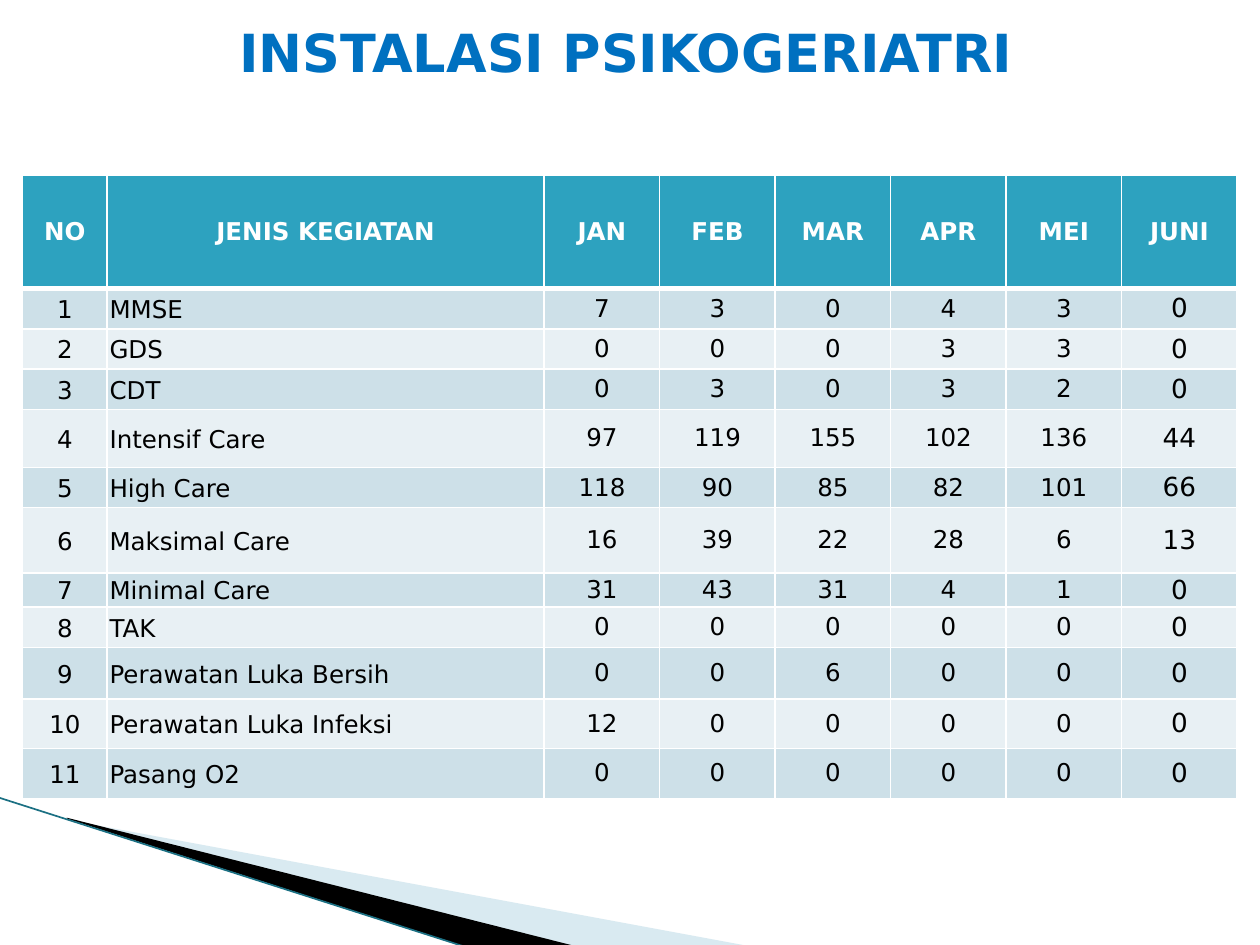
import lxml.etree
import pptx
import pptx.dml.color
import pptx.enum.shapes
import pptx.enum.text
import pptx.oxml.ns
import pptx.util

SLIDE_WIDTH = pptx.util.Inches(10)
SLIDE_HEIGHT = pptx.util.Inches(7.5)
FONT = "DejaVu Sans"
COLOURS = {
    "title": "0070C0",
    "header": "2DA2BF",
    "odd": "CDE0E8",
    "even": "E8F0F4",
    "text": "000000",
    "white": "FFFFFF",
    "pale wedge": "A0CBDC",
    "dark wedge": "000000",
    "edge": "1B7083",
}
HEADINGS = ["NO", "JENIS KEGIATAN", "JAN", "FEB", "MAR", "APR", "MEI", "JUNI"]
ACTIVITIES = [
    ("MMSE", 7, 3, 0, 4, 3, 0),
    ("GDS", 0, 0, 0, 3, 3, 0),
    ("CDT", 0, 3, 0, 3, 2, 0),
    ("Intensif Care", 97, 119, 155, 102, 136, 44),
    ("High Care", 118, 90, 85, 82, 101, 66),
    ("Maksimal Care", 16, 39, 22, 28, 6, 13),
    ("Minimal Care", 31, 43, 31, 4, 1, 0),
    ("TAK", 0, 0, 0, 0, 0, 0),
    ("Perawatan Luka Bersih", 0, 0, 6, 0, 0, 0),
    ("Perawatan Luka Infeksi", 12, 0, 0, 0, 0, 0),
    ("Pasang O2", 0, 0, 0, 0, 0, 0),
]
TABLE_WIDTH = 96.4
NUMBER_WIDTH = 6.7
ACTIVITY_WIDTH = 34.7
MONTH_WIDTH = (TABLE_WIDTH - NUMBER_WIDTH - ACTIVITY_WIDTH) / 6
COLUMN_WIDTHS = [NUMBER_WIDTH, ACTIVITY_WIDTH] + [MONTH_WIDTH] * 6
ROW_HEIGHTS = [12, 4.27, 4.27, 4.27, 6.13, 4.27, 6.93, 3.6, 4.27, 5.47, 5.2, 5.33]


def across(percent):
    """Return a percentage of the slide width."""
    return round(SLIDE_WIDTH * percent / 100)


def down(percent):
    """Return a percentage of the slide height."""
    return round(SLIDE_HEIGHT * percent / 100)


def colour(name):
    """Return the named colour."""
    return pptx.dml.color.RGBColor.from_string(COLOURS[name])


def write(frame, text, size=14, ink="text", bold=False, align="CENTER"):
    """Put one formatted paragraph in a text frame."""
    paragraph = frame.paragraphs[0]
    paragraph.alignment = getattr(pptx.enum.text.PP_ALIGN, align)
    run = paragraph.add_run()
    run.text = text
    run.font.name = FONT
    run.font.size = pptx.util.Pt(size)
    run.font.bold = bold
    run.font.color.rgb = colour(ink)


def add_title(slide, text):
    """Add the slide heading."""
    heading = slide.shapes.add_textbox(across(4.2), 0, across(91), down(10.93))
    heading.text_frame.word_wrap = True
    heading.text_frame.vertical_anchor = pptx.enum.text.MSO_ANCHOR.MIDDLE
    write(heading.text_frame, text, size=30, ink="title", bold=True)


def add_wedge(slide, corners, fill, opacity=100):
    """Add a filled outline through corners given in slide percentages."""
    points = [(across(x), down(y)) for x, y in corners]
    builder = slide.shapes.build_freeform(*points[0])
    builder.add_line_segments(points[1:], close=True)
    wedge = builder.convert_to_shape()
    wedge.shadow.inherit = False
    wedge.fill.solid()
    wedge.fill.fore_color.rgb = colour(fill)
    wedge.line.fill.background()
    if opacity < 100:
        tint = wedge.fill._xPr.find(".//" + pptx.oxml.ns.qn("a:srgbClr"))
        alpha = lxml.etree.SubElement(tint, pptx.oxml.ns.qn("a:alpha"))
        alpha.set("val", str(opacity * 1000))


def add_edge(slide, start, end):
    """Add the thin line along the wedges."""
    edge = slide.shapes.add_connector(
        pptx.enum.shapes.MSO_CONNECTOR.STRAIGHT,
        across(start[0]), down(start[1]), across(end[0]), down(end[1]))
    edge.line.color.rgb = colour("edge")
    edge.line.width = pptx.util.Pt(0.95)
    lxml.etree.SubElement(edge._element.spPr, pptx.oxml.ns.qn("a:effectLst"))


def set_borders(cell, top=1, bottom=1):
    """Draw white borders round a cell, widths in points."""
    properties = cell._tc.get_or_add_tcPr()
    for side, width in (("L", 1), ("R", 1), ("T", top), ("B", bottom)):
        border = lxml.etree.SubElement(properties, pptx.oxml.ns.qn("a:ln" + side))
        border.set("w", str(pptx.util.Pt(width)))
        fill = lxml.etree.SubElement(border, pptx.oxml.ns.qn("a:solidFill"))
        tint = lxml.etree.SubElement(fill, pptx.oxml.ns.qn("a:srgbClr"))
        tint.set("val", COLOURS["white"])


def fill_cell(cell, text, fill, margins, borders, **text_format):
    """Set the text, margins, borders and fill of a cell."""
    left, top, right, bottom = (pptx.util.Inches(margin) for margin in margins)
    cell.margin_left, cell.margin_top = left, top
    cell.margin_right, cell.margin_bottom = right, bottom
    cell.vertical_anchor = pptx.enum.text.MSO_ANCHOR.MIDDLE
    set_borders(cell, **borders)
    cell.fill.solid()
    cell.fill.fore_color.rgb = colour(fill)
    write(cell.text_frame, text, **text_format)


def add_activity_table(slide):
    """Add the table of activities by month."""
    table = slide.shapes.add_table(
        len(ROW_HEIGHTS), len(COLUMN_WIDTHS), across(1.8), down(18.53),
        across(TABLE_WIDTH), down(sum(ROW_HEIGHTS))).table
    for column, width in zip(table.columns, COLUMN_WIDTHS):
        column.width = across(width)
    for row, height in zip(table.rows, ROW_HEIGHTS):
        row.height = down(height)
    for column, heading in enumerate(HEADINGS):
        fill_cell(table.cell(0, column), heading, "header",
                  (0.15, 0.08, 0.15, 0.08), {"bottom": 3}, ink="white", bold=True)
    for number, activity in enumerate(ACTIVITIES, 1):
        for column, value in enumerate((number, *activity)):
            fill_cell(
                table.cell(number, column), str(value),
                "odd" if number % 2 else "even",
                (0.02, 0.02, 0.02, 0) if column < 2 else (0, 0, 0, 0),
                {"top": 3 if number == 1 else 1},
                size=15 if column == len(HEADINGS) - 1 else 14,
                align="LEFT" if column == 1 else "CENTER")


def main():
    """Build and save the slide."""
    presentation = pptx.Presentation()
    presentation.slide_width = SLIDE_WIDTH
    presentation.slide_height = SLIDE_HEIGHT
    slide = presentation.slides.add_slide(presentation.slide_layouts[6])
    add_wedge(slide, [(5.5, 86.8), (59.5, 100.13), (45.6, 100.13), (5.5, 86.67)],
              "pale wedge", opacity=40)
    add_wedge(slide, [(5.3, 86.53), (45.7, 100.13), (37.2, 100.27), (5.4, 86.67)],
              "dark wedge")
    add_edge(slide, (-0.1, 84.4), (37.1, 100.27))
    add_activity_table(slide)
    add_title(slide, "INSTALASI PSIKOGERIATRI")
    presentation.save("out.pptx")


if __name__ == "__main__":
    main()
